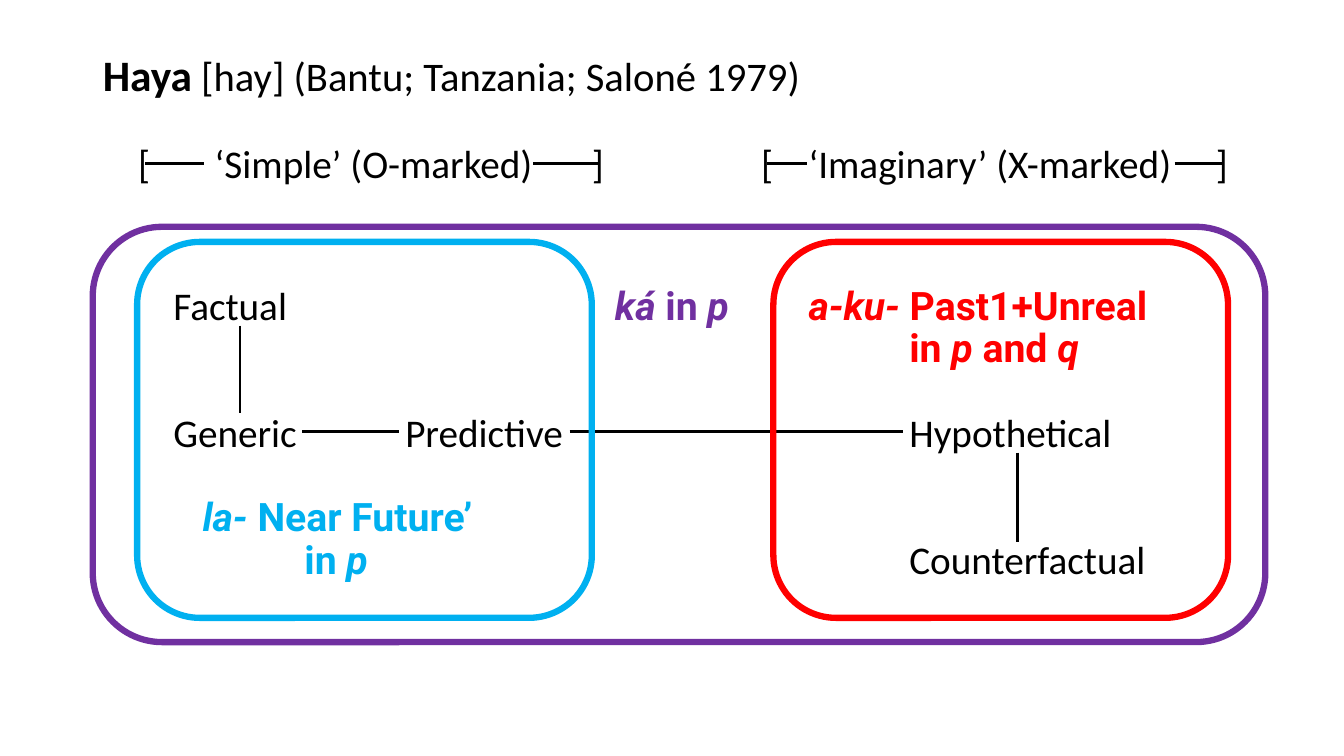
"""Build the slide on Haya conditional types."""
from lxml import etree
from pptx import Presentation
from pptx.dml.color import RGBColor
from pptx.enum import shapes, text
from pptx.oxml import ns
from pptx.util import Inches, Pt

COLORS = {"black": "000000", "purple": "7030A0", "red": "FF0000", "blue": "00B0F0"}
LABEL_HEIGHT = 0.42
HEADER_Y, TOP_Y, MIDDLE_Y, LOWER_Y = 1.62, 3.02, 4.28, 5.12

presentation = Presentation()
presentation.slide_width, presentation.slide_height = Inches(13.33), Inches(7.5)
slide = presentation.slides.add_slide(presentation.slide_layouts[6])


def add_label(left, center, width, runs, color="black", font="Calibri"):
    shape = slide.shapes.add_textbox(
        Inches(left), Inches(center - LABEL_HEIGHT / 2), Inches(width), Inches(LABEL_HEIGHT))
    frame = shape.text_frame
    frame.word_wrap = True
    frame.vertical_anchor = text.MSO_ANCHOR.MIDDLE
    frame.margin_left = Inches(0.06)
    frame.margin_right = frame.margin_top = frame.margin_bottom = 0
    for words, size, bold, italic in runs:
        run = frame.paragraphs[0].add_run()
        run.text = words
        run.font.name, run.font.size = font, Pt(size)
        run.font.bold, run.font.italic = bold, italic
        run.font.color.rgb = RGBColor.from_string(COLORS[color])
    return shape


def add_line(x1, y1, x2, y2):
    line = slide.shapes.add_connector(
        shapes.MSO_CONNECTOR.STRAIGHT, Inches(x1), Inches(y1), Inches(x2), Inches(y2))
    line.line.width = Pt(2)
    line.line.color.rgb = RGBColor.from_string(COLORS["black"])
    etree.SubElement(line._element.spPr, ns.qn("a:effectLst"))
    return line


add_label(0.96, 0.74, 11.4, [("Haya", 31, True, False),
                             (" [hay] (Bantu; Tanzania; Saloné 1979)", 29, False, False)])

labels = {}
for words, left, center, width in [
    ("‘Simple’ (O-marked)", 2.07, HEADER_Y, 3.3),
    ("‘Imaginary’ (X-marked)", 7.96, HEADER_Y, 3.75),
    ("Factual", 1.66, TOP_Y, 1.44),
    ("Generic", 1.66, MIDDLE_Y, 1.34),
    ("Predictive", 3.96, MIDDLE_Y, 1.69),
    ("Hypothetical", 8.96, MIDDLE_Y, 2.26),
    ("Counterfactual", 8.96, 5.54, 2.6),
]:
    labels[words] = add_label(left, center, width, [(words, 28, False, False)])

for bracket, left in [("[", 1.31), ("]", 5.81), ("[", 7.49), ("]", 12)]:
    add_label(left, HEADER_Y, 0.25, [(bracket, 28, False, False)])

for color, left, center, width, parts in [
    ("purple", 6.04, TOP_Y, 1.5, [("ká", True), (" in ", False), ("p", True)]),
    ("red", 7.96, TOP_Y, 3.8, [("a-ku-", True), (" Past1+Unreal", False)]),
    ("red", 8.96, TOP_Y + LABEL_HEIGHT, 2.2,
     [("in ", False), ("p", True), (" and ", False), ("q", True)]),
    ("blue", 1.95, LOWER_Y, 3.3, [("la-", True), (" Near Future’", False)]),
    ("blue", 2.96, LOWER_Y + LABEL_HEIGHT, 1.2, [("in ", False), ("p", True)]),
]:
    runs = [(words, 28, True, italic) for words, italic in parts]
    add_label(left, center, width, runs, color, "Roboto")

factual_generic = add_line(2.38, 3.21, 2.38, 4.1)
factual_generic.begin_connect(labels["Factual"], 2)
hypothetical_counterfactual = add_line(10.09, 4.45, 10.09, 5.38)
hypothetical_counterfactual.begin_connect(labels["Hypothetical"], 2)
for start, end in [("Generic", "Predictive"), ("Predictive", "Hypothetical")]:
    link = add_line(2.96, MIDDLE_Y, 3.96, MIDDLE_Y)
    link.begin_connect(labels[start], 3)
    link.end_connect(labels[end], 1)

for x1, x2 in [(1.44, 2.02), (5.29, 5.94), (7.61, 8), (11.65, 12.14)]:
    add_line(x1, HEADER_Y, x2, HEADER_Y)

for color, left, top, width, height in [
    ("purple", 0.92, 2.25, 11.63, 4.12),
    ("red", 7.67, 2.4, 4.51, 3.73),
    ("blue", 1.36, 2.4, 4.51, 3.73),
]:
    frame = slide.shapes.add_shape(
        shapes.MSO_SHAPE.ROUNDED_RECTANGLE,
        Inches(left), Inches(top), Inches(width), Inches(height))
    frame.shadow.inherit = False
    frame.fill.background()
    frame.line.width = Pt(4.5)
    frame.line.color.rgb = RGBColor.from_string(COLORS[color])

presentation.save("out.pptx")
